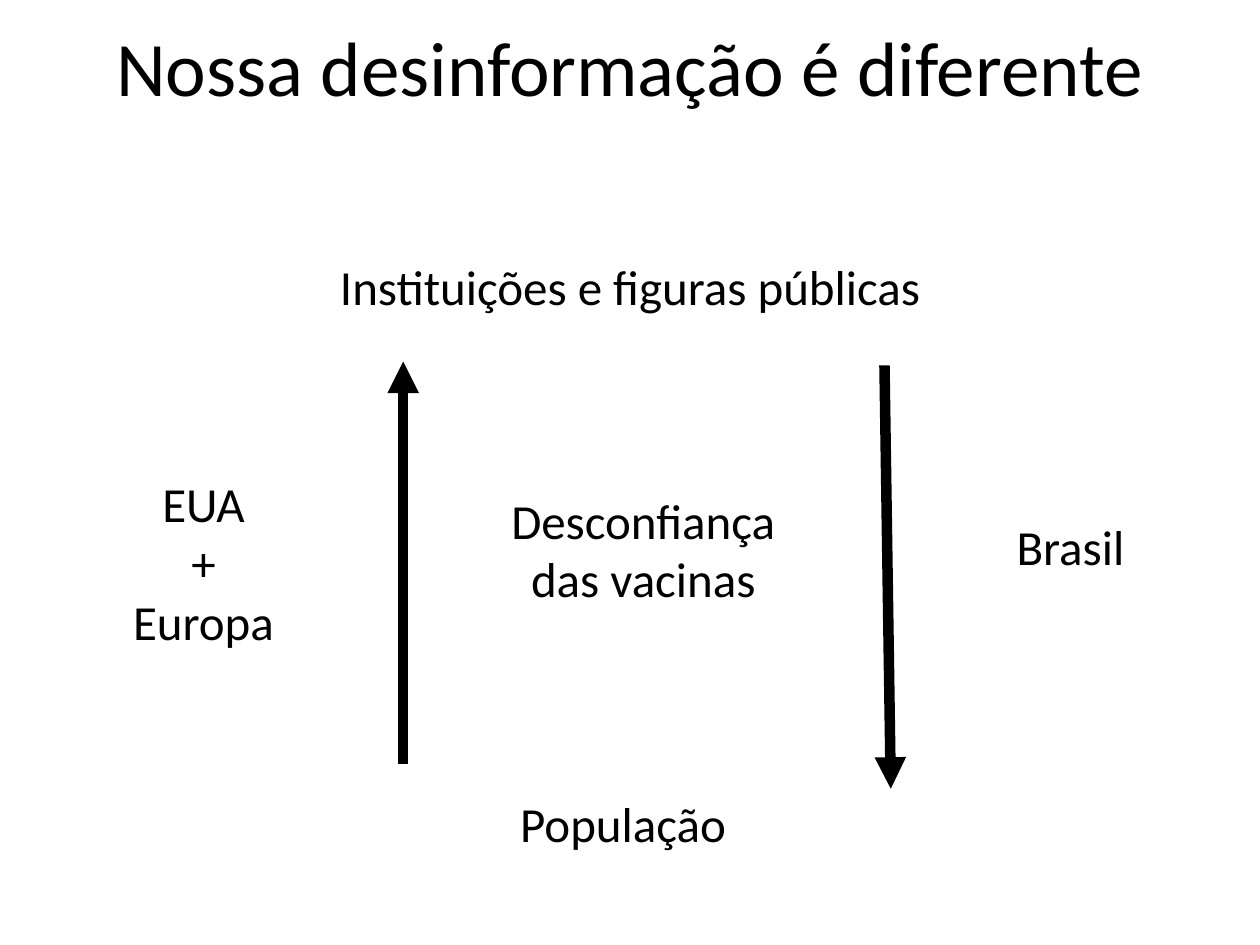
from dataclasses import dataclass

from pptx import Presentation
from pptx.dml.color import RGBColor
from pptx.enum.shapes import MSO_CONNECTOR
from pptx.enum.text import MSO_ANCHOR, PP_ALIGN
from pptx.oxml.ns import qn
from pptx.util import Inches, Pt
from lxml.etree import SubElement


@dataclass(frozen=True)
class Theme:
    font: str = "Calibri"
    ink: RGBColor = RGBColor(0, 0, 0)
    title_size: int = 44
    label_size: int = 28
    arrow_width: int = 6


THEME = Theme()
LABEL_WIDTH, LABEL_HEIGHT = 2.75, 1.25
TOP, MIDDLE = MSO_ANCHOR.TOP, MSO_ANCHOR.MIDDLE

TITLE = ("Nossa desinformação é diferente", 0.5, -0.1, 9, MIDDLE)
# Text, left, top, width, anchor
LABELS = [
    ("Instituições e figuras públicas", 2.42, 1.99, 5.16, TOP),
    ("População", 3.57, 6.25, LABEL_WIDTH, TOP),
    ("EUA\n+\nEuropa", 0.24, 3.71, LABEL_WIDTH, TOP),
    ("Brasil", 7.12, 3.71, LABEL_WIDTH, MIDDLE),
    ("Desconfiança das vacinas", 3.73, 3.84, LABEL_WIDTH, TOP),
]
# Start and end points: distrust rises in EUA + Europa, descends in Brasil
ARROWS = [
    ((3.2, 6.06), (3.2, 2.87)),
    ((7.02, 2.9), (7.07, 6.26)),
]


def add_label(slide, text, left, top, width, anchor, size):
    label = slide.shapes.add_textbox(
        Inches(left), Inches(top), Inches(width), Inches(LABEL_HEIGHT))
    frame = label.text_frame
    frame.word_wrap = True
    frame.vertical_anchor = anchor
    frame.text = text
    for paragraph in frame.paragraphs:
        paragraph.alignment = PP_ALIGN.CENTER
        for run in paragraph.runs:
            run.font.name = THEME.font
            run.font.size = Pt(size)
            run.font.color.rgb = THEME.ink


def add_arrow(slide, start, end):
    arrow = slide.shapes.add_connector(
        MSO_CONNECTOR.STRAIGHT, *map(Inches, start + end))
    arrow.line.color.rgb = THEME.ink
    arrow.line.width = Pt(THEME.arrow_width)
    properties = arrow.element.spPr
    SubElement(properties.find(qn("a:ln")), qn("a:tailEnd"), type="triangle")
    SubElement(properties, qn("a:effectLst"))


def main():
    deck = Presentation()
    deck.slide_width, deck.slide_height = Inches(10), Inches(7.5)
    slide = deck.slides.add_slide(deck.slide_layouts[6])
    add_label(slide, *TITLE, THEME.title_size)
    for start, end in ARROWS:
        add_arrow(slide, start, end)
    for label in LABELS:
        add_label(slide, *label, THEME.label_size)
    deck.save("out.pptx")


if __name__ == "__main__":
    main()
